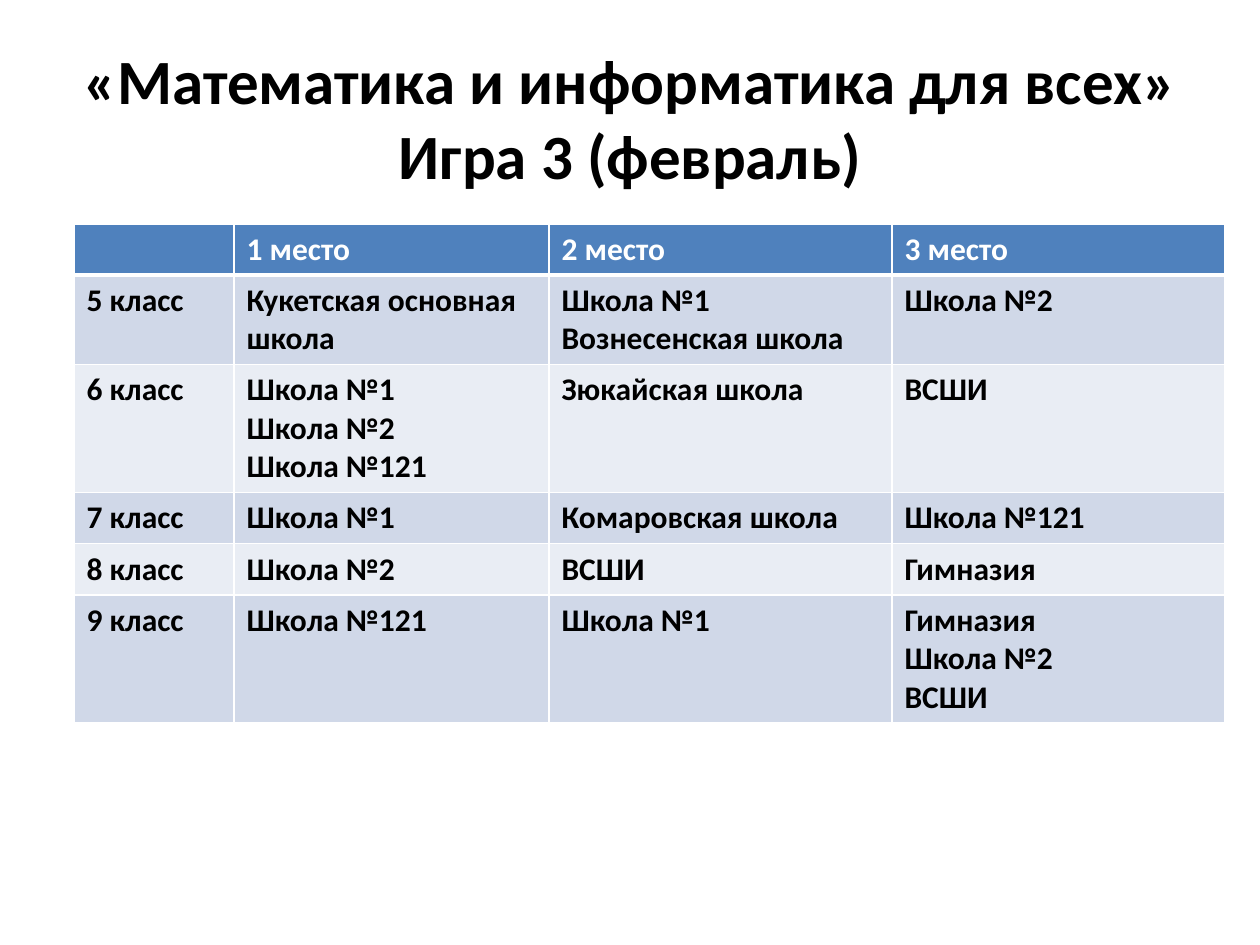
from typing import NamedTuple

from lxml import etree
from pptx import Presentation
from pptx.dml.color import RGBColor
from pptx.enum.text import MSO_ANCHOR, PP_ALIGN
from pptx.oxml.ns import qn
from pptx.util import Emu, Pt

CENTER = PP_ALIGN.CENTER
MIDDLE = MSO_ANCHOR.MIDDLE
BLACK = RGBColor(0x00, 0x00, 0x00)
WHITE = RGBColor(0xFF, 0xFF, 0xFF)
HEADER_BLUE = RGBColor(0x4F, 0x81, 0xBD)
BANDS = (RGBColor(0xD0, 0xD8, 0xE8), RGBColor(0xE9, 0xED, 0xF4))
TITLE_ONLY = 5
ROW_HEIGHT = 51
COLUMN_WIDTHS = (160, 315, 343, 333)


class Box(NamedTuple):
    left: int
    top: int
    width: int
    height: int


class ResultRow(NamedTuple):
    """One grade; each place lists its schools, one paragraph per school."""
    grade: str
    first: tuple[str, ...]
    second: tuple[str, ...]
    third: tuple[str, ...]


TITLE_BOX = Box(63, 38, 1134, 158)
TABLE_BOX = Box(74, 224, sum(COLUMN_WIDTHS), 494)
TITLE_LINES = ("«Математика и информатика для всех»", "Игра 3 (февраль)")
HEADERS = ("", "1 место", "2 место", "3 место")
RESULTS = (
    ResultRow("5 класс", ("Кукетская основная школа",),
              ("Школа №1", "Вознесенская школа"), ("Школа №2",)),
    ResultRow("6 класс", ("Школа №1", "Школа №2", "Школа №121"),
              ("Зюкайская школа",), ("ВСШИ",)),
    ResultRow("7 класс", ("Школа №1",), ("Комаровская школа",), ("Школа №121",)),
    ResultRow("8 класс", ("Школа №2",), ("ВСШИ",), ("Гимназия",)),
    ResultRow("9 класс", ("Школа №121",), ("Школа №1",),
              ("Гимназия", "Школа №2", "ВСШИ")),
)


def px(length: int) -> Emu:
    return Emu(round(length * 914400 / 126))


def format_font(font, size: int, color: RGBColor) -> None:
    for name, value in {"name": "Calibri", "size": Pt(size), "bold": True}.items():
        setattr(font, name, value)
    font.color.rgb = color


def add_title(slide, box: Box, lines: tuple[str, ...]) -> None:
    title = slide.shapes.title
    for name, value in box._asdict().items():
        setattr(title, name, px(value))
    frame = title.text_frame
    frame.word_wrap = True
    frame.vertical_anchor = MIDDLE
    paragraph = frame.paragraphs[0]
    paragraph.alignment = CENTER
    for index, line in enumerate(lines):
        if index:
            paragraph.add_line_break()
        run = paragraph.add_run()
        run.text = line
        format_font(run.font, 36, BLACK)


def set_borders(cell, bottom_width: int) -> None:
    """Draw white borders; they must come before the fill in the cell properties."""
    properties = cell._tc.get_or_add_tcPr()
    widths = {"a:lnL": 1, "a:lnR": 1, "a:lnT": 1, "a:lnB": bottom_width}
    for tag, width in widths.items():
        line = etree.SubElement(properties, qn(tag), w=str(Pt(width)))
        fill = etree.SubElement(line, qn("a:solidFill"))
        etree.SubElement(fill, qn("a:srgbClr"), val=str(WHITE))


def fill_cell(cell, lines: tuple[str, ...], background: RGBColor,
              color: RGBColor, bottom_width: int) -> None:
    set_borders(cell, bottom_width)
    cell.fill.solid()
    cell.fill.fore_color.rgb = background
    cell.text = "\n".join(lines)
    for paragraph in cell.text_frame.paragraphs:
        format_font(paragraph.font, 18, color)
        for run in paragraph.runs:
            format_font(run.font, 18, color)


def add_results_table(slide, box: Box, results: tuple[ResultRow, ...]) -> None:
    frame = slide.shapes.add_table(len(results) + 1, len(HEADERS), *map(px, box))
    table = frame.table
    for column, width in zip(table.columns, COLUMN_WIDTHS):
        column.width = px(width)
    for row in table.rows:
        row.height = px(ROW_HEIGHT)
    frame.height = px(box.height)

    for column_index, header in enumerate(HEADERS):
        fill_cell(table.cell(0, column_index), (header,), HEADER_BLUE, WHITE, 3)
    for row_index, result in enumerate(results, start=1):
        background = BANDS[(row_index - 1) % len(BANDS)]
        contents = ((result.grade,), result.first, result.second, result.third)
        for column_index, lines in enumerate(contents):
            fill_cell(table.cell(row_index, column_index), lines, background, BLACK, 1)


def main() -> None:
    presentation = Presentation()
    presentation.slide_width = px(1260)
    presentation.slide_height = px(945)
    slide = presentation.slides.add_slide(presentation.slide_layouts[TITLE_ONLY])
    add_title(slide, TITLE_BOX, TITLE_LINES)
    add_results_table(slide, TABLE_BOX, RESULTS)
    presentation.save("out.pptx")


if __name__ == "__main__":
    main()
